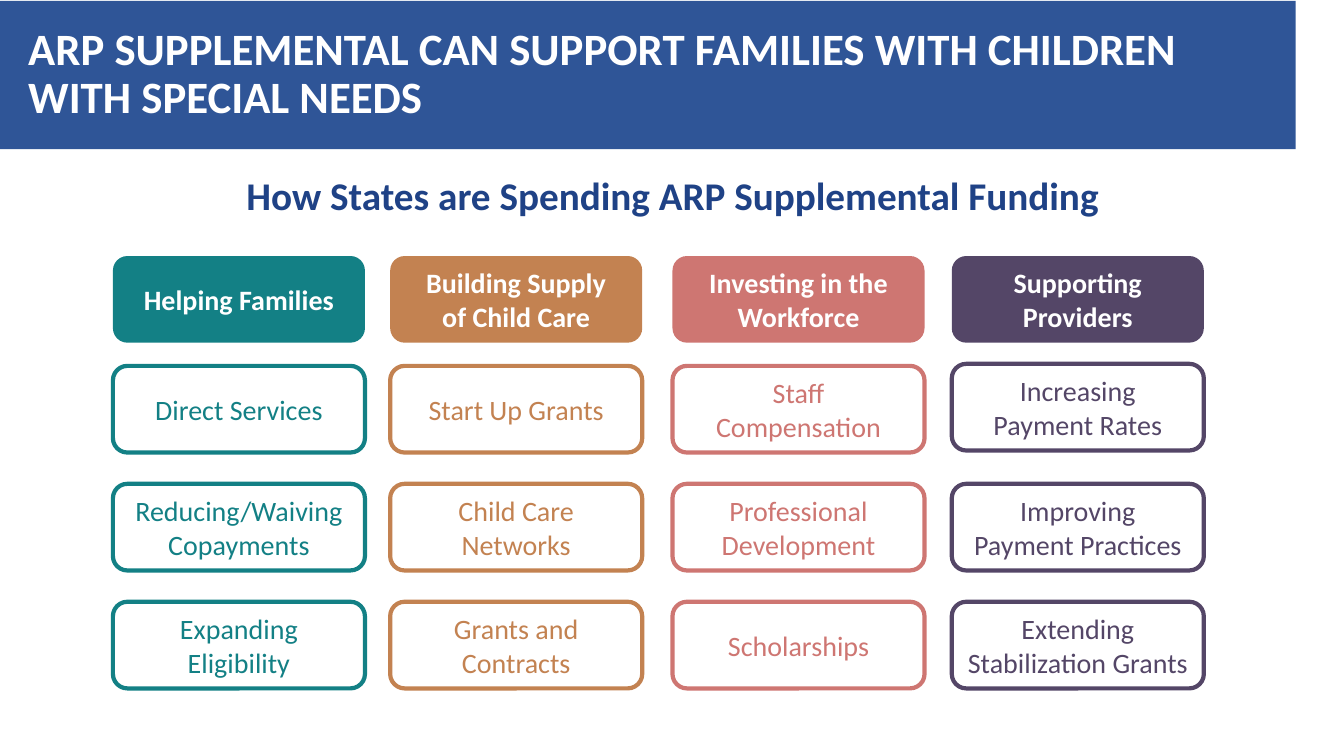
"""Build the slide on how states spend ARP supplemental funding."""
from pptx import Presentation
from pptx.dml.color import RGBColor
from pptx.enum.shapes import MSO_SHAPE
from pptx.enum.text import MSO_ANCHOR, PP_ALIGN
from pptx.util import Inches, Pt

RECTANGLE, ROUNDED = MSO_SHAPE.RECTANGLE, MSO_SHAPE.ROUNDED_RECTANGLE
LEFT, CENTER = PP_ALIGN.LEFT, PP_ALIGN.CENTER
TOP, MIDDLE = MSO_ANCHOR.TOP, MSO_ANCHOR.MIDDLE

WHITE = RGBColor(0xFF, 0xFF, 0xFF)
BANNER_BLUE = RGBColor(0x2F, 0x55, 0x97)
HEADING_BLUE = RGBColor(0x1F, 0x42, 0x86)
TEAL = RGBColor(0x13, 0x80, 0x85)
OCHRE = RGBColor(0xC3, 0x82, 0x51)
ROSE = RGBColor(0xCE, 0x76, 0x72)
PLUM = RGBColor(0x54, 0x46, 0x67)

TITLE = ["ARP SUPPLEMENTAL CAN SUPPORT FAMILIES WITH CHILDREN", "WITH SPECIAL NEEDS"]
HEADING = ["How States are Spending ARP Supplemental Funding"]
COLUMNS = [
    {"left": 1.12, "first_top": 3.63, "margin": 0.16, "color": TEAL,
     "header": ["Helping Families"],
     "items": [["Direct Services"], ["Reducing/Waiving", "Copayments"],
               ["Expanding Eligibility"]]},
    {"left": 3.87, "first_top": 3.63, "margin": 0.22, "color": OCHRE,
     "header": ["Building Supply of Child Care"],
     "items": [["Start Up Grants"], ["Child Care", "Networks"],
               ["Grants and", "Contracts"]]},
    {"left": 6.67, "first_top": 3.63, "margin": 0.22, "color": ROSE,
     "header": ["Investing in the Workforce"],
     "items": [["Staff Compensation"], ["Professional Development"],
               ["Scholarships"]]},
    {"left": 9.44, "first_top": 3.61, "margin": 0.16, "color": PLUM,
     "header": ["Supporting", "Providers"],
     "items": [["Increasing Payment Rates"], ["Improving Payment Practices"],
               ["Extending Stabilization Grants"]]},
]
NARROW_MARGINS = {"Extending Stabilization Grants": 0.06}
HEADER_TOP, SECOND_TOP, ROW_STEP = 2.54, 4.8, 1.17
CARD_WIDTH, CARD_HEIGHT = 2.5, 0.86


def write(box, lines, size, color, bold=False, align=CENTER, anchor=MIDDLE,
          margin=0.1, vertical=0, spacing=1.0):
    """Fill a box with one paragraph per line."""
    frame = box.text_frame
    settings = {"word_wrap": True, "vertical_anchor": anchor,
                "margin_left": Inches(margin), "margin_right": Inches(margin),
                "margin_top": Inches(vertical), "margin_bottom": Inches(vertical)}
    for name, value in settings.items():
        setattr(frame, name, value)
    for index, line in enumerate(lines):
        para = frame.add_paragraph() if index else frame.paragraphs[0]
        para.alignment, para.line_spacing = align, spacing
        span = para.add_run()
        span.text = line
        for name, value in {"name": "Calibri", "size": Pt(size), "bold": bold}.items():
            setattr(span.font, name, value)
        span.font.color.rgb = color


def add_panel(page, kind, left, top, width, height, fill=None, line=None):
    """Add a filled or outlined shape."""
    panel = page.shapes.add_shape(
        kind, Inches(left), Inches(top), Inches(width), Inches(height))
    panel.shadow.inherit = False
    if fill is None:
        panel.fill.background()
    else:
        panel.fill.solid()
        panel.fill.fore_color.rgb = fill
    if line is None:
        panel.line.fill.background()
    else:
        panel.line.color.rgb = line
        panel.line.width = Pt(3)
    return panel


def add_column(page, column):
    """Add a header card and the outlined cards below it."""
    color, left = column["color"], column["left"]
    header = add_panel(page, ROUNDED, left, HEADER_TOP, CARD_WIDTH, CARD_HEIGHT, fill=color)
    write(header, column["header"], 20, WHITE, bold=True, margin=column["margin"])
    tops = [column["first_top"], SECOND_TOP, SECOND_TOP + ROW_STEP]
    for top, lines in zip(tops, column["items"]):
        card = add_panel(page, ROUNDED, left, top, CARD_WIDTH, CARD_HEIGHT, line=color)
        margin = NARROW_MARGINS.get(lines[0], column["margin"])
        write(card, lines, 20, color, margin=margin)


def main():
    """Create and save the deck."""
    deck = Presentation()
    deck.slide_width, deck.slide_height = Inches(13.33), Inches(7.5)
    page = deck.slides.add_slide(deck.slide_layouts[6])
    banner = add_panel(page, RECTANGLE, 0, 0.01, 12.85, 1.47, fill=BANNER_BLUE)
    write(banner, TITLE, 32, WHITE, bold=True, align=LEFT, margin=0.28,
          vertical=0.04, spacing=0.9)
    heading = page.shapes.add_textbox(Inches(0.92), Inches(1.7), Inches(11.5), Inches(0.6))
    write(heading, HEADING, 28, HEADING_BLUE, bold=True, anchor=TOP,
          vertical=0.05, spacing=0.9)
    for column in COLUMNS:
        add_column(page, column)
    deck.save("out.pptx")


if __name__ == "__main__":
    main()
